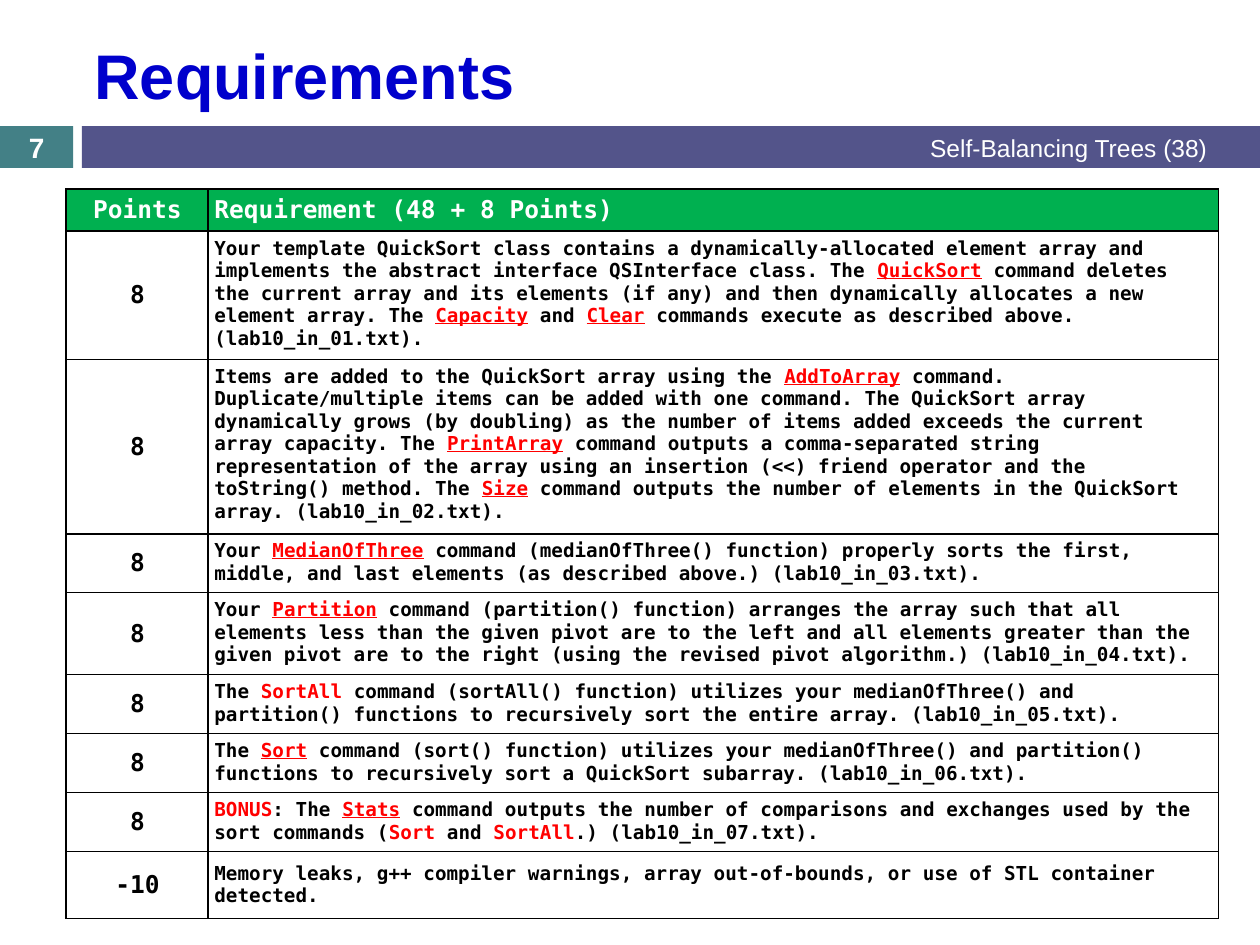
from dataclasses import dataclass

import lxml.etree
import pptx
import pptx.dml.color
import pptx.enum.shapes
import pptx.enum.text
import pptx.oxml.ns
import pptx.util

Pt = pptx.util.Pt
Align = pptx.enum.text.PP_ALIGN
Anchor = pptx.enum.text.MSO_ANCHOR

SANS = "Arial"
MONO = "DejaVu Sans Mono"
BLACK, WHITE, RED = "000000", "FFFFFF", "FF0000"
HEADER_GREEN = "00B050"
COLUMN_WIDTHS = (81.3, 577.5)
BAND_TOP, BAND_HEIGHT = 72, 24


@dataclass(frozen=True)
class Run:
    text: str
    color: str = BLACK
    underline: bool = False


@dataclass(frozen=True)
class Style:
    font: str
    size: float
    bold: bool = False


@dataclass(frozen=True)
class Box:
    left: float
    top: float
    width: float
    height: float

    def lengths(self) -> list[pptx.util.Length]:
        return [Pt(value) for value in (self.left, self.top, self.width, self.height)]


@dataclass(frozen=True)
class Requirement:
    points: str
    height: float
    runs: tuple[Run, ...]
    anchor: Anchor = Anchor.TOP


def command(name: str) -> Run:
    return Run(name, RED, True)


def keyword(name: str) -> Run:
    return Run(name, RED)


REQUIREMENTS = (
    Requirement("8", 71.3, (
        Run("Your template QuickSort class contains a dynamically-allocated element array and "
            "implements the abstract interface QSInterface class. The "),
        command("QuickSort"),
        Run(" command deletes the current array and its elements (if any) and then "
            "dynamically allocates a new element array. The "),
        command("Capacity"), Run(" and "), command("Clear"),
        Run(" commands execute as described above. (lab10_in_01.txt)."))),
    Requirement("8", 97.1, (
        Run("Items are added to the QuickSort array using the "),
        command("AddToArray"),
        Run(" command. Duplicate/multiple items can be added with one command. The QuickSort "
            "array dynamically grows (by doubling) as the number of items added exceeds the "
            "current array capacity. The "),
        command("PrintArray"),
        Run(" command outputs a comma-separated string representation of the array using an "
            "insertion (<<) friend operator and the toString() method. The "),
        command("Size"),
        Run(" command outputs the number of elements in the QuickSort array. "
            "(lab10_in_02.txt)."))),
    Requirement("8", 33, (
        Run("Your "), command("MedianOfThree"),
        Run(" command (medianOfThree() function) properly sorts the first, middle, and last "
            "elements (as described above.) (lab10_in_03.txt)."))),
    Requirement("8", 45.7, (
        Run("Your "), command("Partition"),
        Run(" command (partition() function) arranges the array such that all elements less "
            "than the given pivot are to the left and all elements greater than the given "
            "pivot are to the right (using the revised pivot algorithm.) (lab10_in_04.txt)."))),
    Requirement("8", 33, (
        Run("The "), keyword("SortAll"),
        Run(" command (sortAll() function) utilizes your medianOfThree() and partition() "
            "functions to recursively sort the entire array. (lab10_in_05.txt)."))),
    Requirement("8", 33.8, (
        Run("The "), command("Sort"),
        Run(" command (sort() function) utilizes your medianOfThree() and partition() "
            "functions to recursively sort a QuickSort subarray. (lab10_in_06.txt)."))),
    Requirement("8", 33, (
        keyword("BONUS"), Run(": The "), command("Stats"),
        Run(" command outputs the number of comparisons and exchanges used by the sort "
            "commands ("),
        keyword("Sort"), Run(" and "), keyword("SortAll"),
        Run(".) (lab10_in_07.txt)."))),
    Requirement("-10", 38.4, (
        Run("Memory leaks, g++ compiler warnings, array out-of-bounds, or use of STL "
            "container detected."),), Anchor.MIDDLE),
)


def rgb(color: str) -> pptx.dml.color.RGBColor:
    return pptx.dml.color.RGBColor.from_string(color)


def write(text_frame, runs: tuple[Run, ...], style: Style, align: Align) -> None:
    paragraph = text_frame.paragraphs[0]
    paragraph.alignment = align
    for item in runs:
        run = paragraph.add_run()
        run.text = item.text
        run.font.name = style.font
        run.font.size = Pt(style.size)
        run.font.bold = style.bold
        run.font.underline = item.underline
        run.font.color.rgb = rgb(item.color)


def add_title(slide, text: str) -> None:
    title = slide.shapes.title
    title.left, title.top, title.width, title.height = Box(46.8, 13.7, 642, 57.6).lengths()
    title.text_frame.auto_size = pptx.enum.text.MSO_AUTO_SIZE.NONE
    title.text_frame.vertical_anchor = Anchor.MIDDLE
    write(title.text_frame, (Run(text, "0000CC"),), Style(SANS, 36, True), Align.LEFT)


def add_band(slide, box: Box, color: str) -> None:
    band = slide.shapes.add_shape(pptx.enum.shapes.MSO_SHAPE.RECTANGLE, *box.lengths())
    band.shadow.inherit = False
    band.fill.solid()
    band.fill.fore_color.rgb = rgb(color)
    band.line.fill.background()


def add_label(slide, box: Box, text: str, style: Style, align: Align) -> None:
    text_frame = slide.shapes.add_textbox(*box.lengths()).text_frame
    text_frame.word_wrap = True
    text_frame.vertical_anchor = Anchor.MIDDLE
    write(text_frame, (Run(text, WHITE),), style, align)


def set_borders(cell, color: str, width: float) -> None:
    properties = cell._tc.get_or_add_tcPr()
    for position, side in enumerate(("lnL", "lnR", "lnT", "lnB")):
        line = lxml.etree.Element(pptx.oxml.ns.qn(f"a:{side}"), w=str(Pt(width)))
        fill = lxml.etree.SubElement(line, pptx.oxml.ns.qn("a:solidFill"))
        lxml.etree.SubElement(fill, pptx.oxml.ns.qn("a:srgbClr"), val=color)
        properties.insert(position, line)


def fill_cell(cell, runs: tuple[Run, ...], size: float, align: Align, anchor: Anchor,
              margins: tuple[float, ...], color: str | None) -> None:
    """Margins run left, top, right, bottom; without a color the cell is clear."""
    (cell.margin_left, cell.margin_top,
     cell.margin_right, cell.margin_bottom) = [Pt(margin) for margin in margins]
    cell.vertical_anchor = anchor
    if color:
        cell.fill.solid()
        cell.fill.fore_color.rgb = rgb(color)
    else:
        cell.fill.background()
    set_borders(cell, BLACK, 1)
    write(cell.text_frame, runs, Style(MONO, size, True), align)


def add_requirements_table(slide) -> None:
    heading = Requirement("Points", 23.5, (Run("Requirement (48 + 8 Points)", WHITE),))
    rows = (heading, *REQUIREMENTS)
    box = Box(37.6, 108, sum(COLUMN_WIDTHS), sum(row.height for row in rows))
    table = slide.shapes.add_table(len(rows), len(COLUMN_WIDTHS), *box.lengths()).table
    for column, width in zip(table.columns, COLUMN_WIDTHS):
        column.width = Pt(width)
    for index, row in enumerate(rows):
        table.rows[index].height = Pt(row.height)
        is_heading = row is heading
        color = HEADER_GREEN if is_heading else None
        points = (Run(row.points, WHITE if is_heading else BLACK),)
        fill_cell(table.cell(index, 0), points, 14, Align.CENTER, Anchor.MIDDLE,
                  (1.4, 0.7, 0.7, 0.7), color)
        fill_cell(table.cell(index, 1), row.runs, 14 if is_heading else 11, Align.LEFT,
                  row.anchor, (3.6,) * 4, color)


def main() -> None:
    presentation = pptx.Presentation()
    presentation.slide_width, presentation.slide_height = Pt(720), Pt(540)
    slide = presentation.slides.add_slide(presentation.slide_layouts[5])
    number_box = Box(0, BAND_TOP, 41.8, BAND_HEIGHT)
    add_band(slide, number_box, "438086")
    add_band(slide, Box(46.8, BAND_TOP, 673.2, BAND_HEIGHT), "53548A")
    add_title(slide, "Requirements")
    add_label(slide, Box(270, 72.5, 427, BAND_HEIGHT), "Self-Balancing Trees (38)",
              Style(SANS, 14), Align.RIGHT)
    add_label(slide, number_box, "7", Style(SANS, 16, True), Align.CENTER)
    add_requirements_table(slide)
    presentation.save("out.pptx")


if __name__ == "__main__":
    main()
